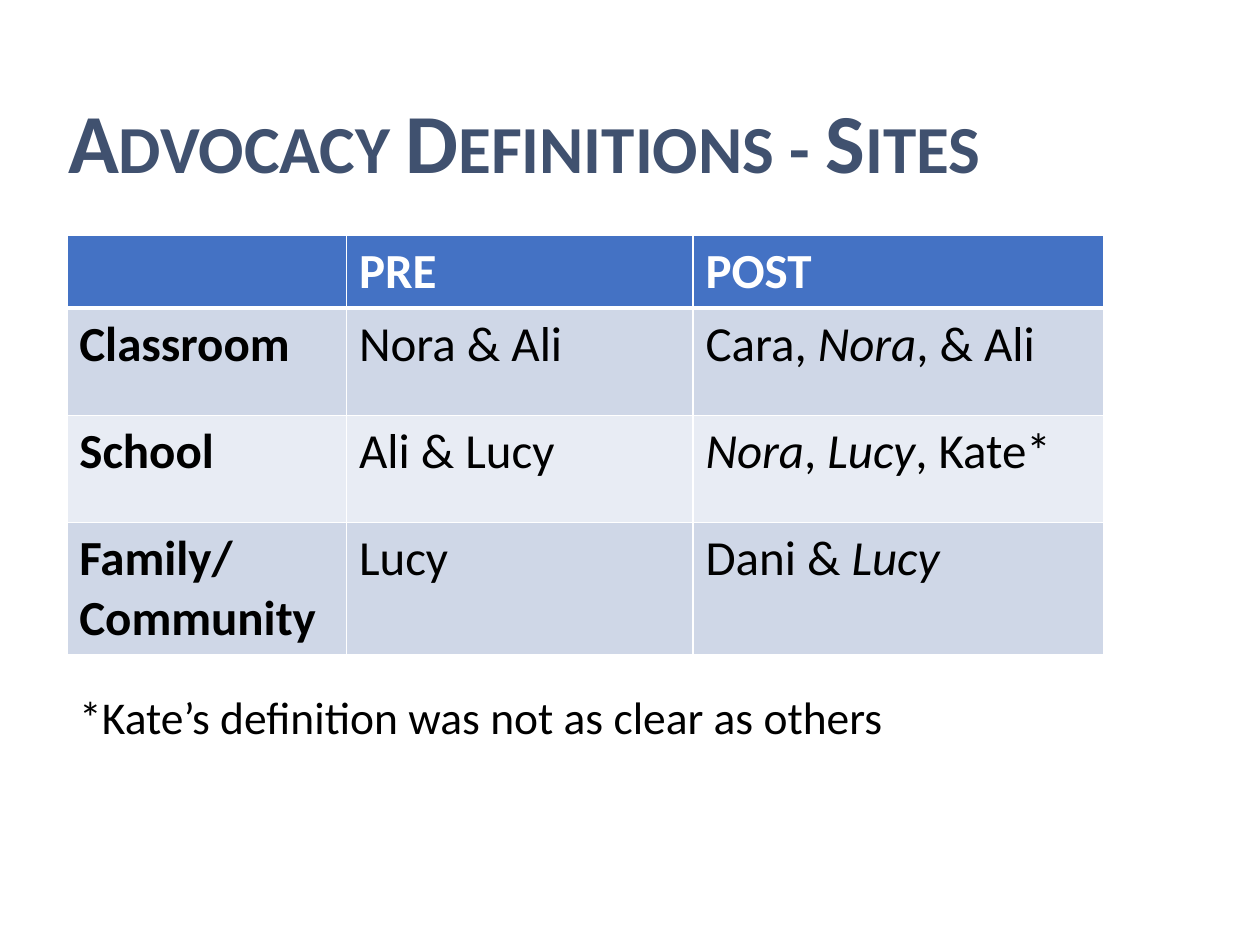
from dataclasses import dataclass

from lxml.etree import SubElement
from pptx import Presentation
from pptx.dml.color import RGBColor
from pptx.enum.text import MSO_ANCHOR, MSO_AUTO_SIZE, PP_ALIGN
from pptx.oxml.ns import qn
from pptx.util import Inches, Pt


@dataclass(frozen=True)
class Theme:
    font: str = "Calibri"
    title: str = "40516F"
    text: str = "000000"
    white: str = "FFFFFF"
    header: str = "4472C4"
    bands: tuple = ("CFD7E7", "E8ECF4")
    title_size: int = 48
    table_size: int = 28
    note_size: int = 26


theme = Theme()


def style(font, size, color, bold=False):
    font.name = theme.font
    font.size = Pt(size)
    font.bold = bold
    font.color.rgb = RGBColor.from_string(color)


def add_borders(cell, bottom_width):
    """Draw white cell borders; they must precede the fill in the XML."""
    properties = cell._tc.get_or_add_tcPr()
    for side, width in (("L", 1), ("R", 1), ("T", 1), ("B", bottom_width)):
        line = SubElement(properties, qn(f"a:ln{side}"), w=str(Pt(width)))
        fill = SubElement(line, qn("a:solidFill"))
        SubElement(fill, qn("a:srgbClr"), val=theme.white)


deck = Presentation()
deck.slide_width, deck.slide_height = Inches(10), Inches(7.5)
page = deck.slides.add_slide(deck.slide_layouts[5])

# Title in small capitals
title = page.shapes.title
title.left, title.top = Inches(0.44), Inches(0.36)
title.width, title.height = Inches(9.16), Inches(1.25)
frame = title.text_frame
frame.text = "Advocacy Definitions - Sites"
frame.auto_size = MSO_AUTO_SIZE.NONE
frame.vertical_anchor = MSO_ANCHOR.BOTTOM
frame.margin_left = frame.margin_right = Inches(0.1)
frame.margin_top = frame.margin_bottom = Inches(0.1)
para = frame.paragraphs[0]
para.alignment = PP_ALIGN.LEFT
style(para.font, theme.title_size, theme.title, bold=True)
para.runs[0]._r.get_or_add_rPr().set("cap", "small")

# Table of sites; text between underscores is italic
rows = [
    ("", "PRE", "POST"),
    ("Classroom", "Nora & Ali", "Cara, _Nora_, & Ali"),
    ("School", "Ali & Lucy", "_Nora_, _Lucy_, Kate*"),
    ("Family/ Community", "Lucy", "Dani & _Lucy_"),
]
column_widths = (2.22, 2.75, 3.26)
row_heights = (0.54, 0.85, 0.85, 0.98)
table = page.shapes.add_table(
    len(rows), len(column_widths),
    Inches(0.53), Inches(1.87), Inches(8.22), Inches(3.22),
).table
for column, width in zip(table.columns, column_widths):
    column.width = Inches(width)
for row, height in zip(table.rows, row_heights):
    row.height = Inches(height)

for r, texts in enumerate(rows):
    is_header = r == 0
    for c, text in enumerate(texts):
        cell = table.cell(r, c)
        add_borders(cell, bottom_width=3 if is_header else 1)
        cell.fill.solid()
        cell.fill.fore_color.rgb = RGBColor.from_string(
            theme.header if is_header else theme.bands[(r - 1) % 2])
        para = cell.text_frame.paragraphs[0]
        style(para.font, theme.table_size,
              theme.white if is_header else theme.text,
              bold=is_header or c == 0)
        for i, part in enumerate(text.split("_")):
            if part:
                span = para.add_run()
                span.text = part
                span.font.italic = i % 2 == 1

# Footnote
box = page.shapes.add_textbox(Inches(0.53), Inches(5.42), Inches(8.22), Inches(0.54))
frame = box.text_frame
frame.word_wrap = True
frame.auto_size = MSO_AUTO_SIZE.SHAPE_TO_FIT_TEXT
frame.text = "*Kate’s definition was not as clear as others"
style(frame.paragraphs[0].font, theme.note_size, theme.text)

deck.save("out.pptx")
